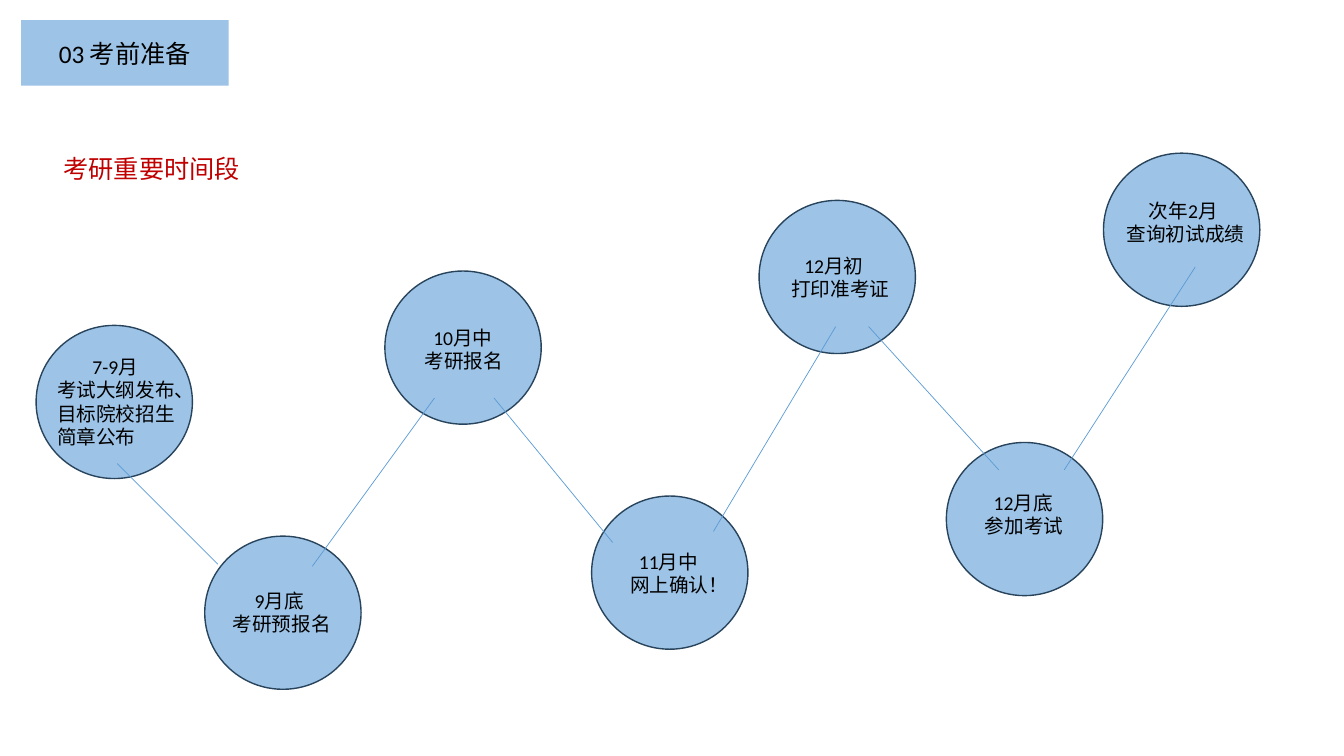
from dataclasses import dataclass

from pptx import Presentation
from pptx.dml.color import RGBColor
from pptx.enum.shapes import MSO_CONNECTOR, MSO_SHAPE
from pptx.enum.text import MSO_ANCHOR, MSO_AUTO_SIZE, PP_ALIGN
from pptx.oxml.ns import qn
from pptx.util import Cm, Pt
from lxml.etree import SubElement


@dataclass(frozen=True)
class Theme:
    font: str = "Calibri"
    fill: RGBColor = RGBColor(0x9D, 0xC3, 0xE6)
    outline: RGBColor = RGBColor(0x28, 0x44, 0x5D)
    link: RGBColor = RGBColor(0x5B, 0x9B, 0xD5)
    text: RGBColor = RGBColor(0, 0, 0)
    accent: RGBColor = RGBColor(0xC0, 0, 0)
    heading_size: Pt = Pt(18)
    body_size: Pt = Pt(14)
    outline_width: Pt = Pt(1)
    link_width: Pt = Pt(0.5)


THEME = Theme()
CIRCLE_WIDTH, CIRCLE_HEIGHT = 3.94, 3.86
DATE_INDENT = 0.89

# circle left and top, label left and top, date, event, event indent (cm)
MILESTONES = [
    (0.91, 8.2, 1.19, 8.81, "7-9月", "考试大纲发布、目标院校招生简章公布", 0),
    (5.16, 13.51, 5.28, 14.71, "9月底", "考研预报名", 0.33),
    (9.7, 6.83, 9.78, 8.08, "10月中", "考研报名", 0.67),
    (14.91, 12.5, 14.96, 13.72, "11月中", "网上确认！", 0.67),
    (19.13, 5.05, 19.13, 6.27, "12月初", "打印准考证", 0.56),
    (23.85, 11.15, 23.9, 12.24, "12月底", "参加考试", 0.67),
    (27.81, 3.86, 27.81, 4.88, "次年2月", "查询初试成绩", 0.33),
]

# start x, start y, end x, end y (cm)
LINKS = [
    (2.95, 11.68, 5.49, 14.22),
    (7.87, 14.27, 10.95, 10.03),
    (12.45, 10.03, 15.44, 13.67),
    (17.98, 13.39, 21.06, 8.23),
    (21.89, 8.23, 25.17, 11.84),
    (30.12, 6.73, 26.82, 11.84),
]


def add_run(paragraph, text, size, color=THEME.text):
    run = paragraph.add_run()
    run.text = text
    run.font.name = THEME.font
    run.font.size = size
    run.font.color.rgb = color


def indent(paragraph, distance):
    properties = paragraph._p.get_or_add_pPr()
    properties.set("marL", str(Cm(distance)))
    properties.set("indent", "0")


def format_title(slide):
    title = slide.shapes.title
    title.left, title.top, title.width, title.height = Cm(0.53), Cm(0.51), Cm(5.23), Cm(1.65)
    title.fill.solid()
    title.fill.fore_color.rgb = THEME.fill
    frame = title.text_frame
    frame.auto_size = MSO_AUTO_SIZE.NONE
    frame.vertical_anchor = MSO_ANCHOR.MIDDLE
    paragraph = frame.paragraphs[0]
    paragraph.alignment = PP_ALIGN.CENTER
    add_run(paragraph, "03 考前准备", THEME.heading_size)


def add_subtitle(slide):
    box = slide.shapes.add_textbox(Cm(1.35), Cm(3.73), Cm(5), Cm(1.02))
    box.text_frame.word_wrap = False
    add_run(box.text_frame.paragraphs[0], "考研重要时间段", THEME.heading_size, THEME.accent)


def add_circle(slide, left, top):
    circle = slide.shapes.add_shape(
        MSO_SHAPE.FLOWCHART_CONNECTOR,
        Cm(left), Cm(top), Cm(CIRCLE_WIDTH), Cm(CIRCLE_HEIGHT),
    )
    circle.shadow.inherit = False
    circle.fill.solid()
    circle.fill.fore_color.rgb = THEME.fill
    circle.line.color.rgb = THEME.outline
    circle.line.width = THEME.outline_width


def add_label(slide, left, top, date, event, event_indent):
    box = slide.shapes.add_textbox(Cm(left), Cm(top), Cm(CIRCLE_WIDTH), Cm(1.45))
    frame = box.text_frame
    frame.word_wrap = True
    frame.auto_size = MSO_AUTO_SIZE.SHAPE_TO_FIT_TEXT
    lines = [(frame.paragraphs[0], date, DATE_INDENT),
             (frame.add_paragraph(), event, event_indent)]
    for paragraph, text, distance in lines:
        indent(paragraph, distance)
        add_run(paragraph, text, THEME.body_size)


def add_link(slide, *ends):
    link = slide.shapes.add_connector(MSO_CONNECTOR.STRAIGHT, *map(Cm, ends))
    link.line.color.rgb = THEME.link
    link.line.width = THEME.link_width
    SubElement(link._element.spPr, qn("a:effectLst"))


def main():
    presentation = Presentation()
    presentation.slide_width, presentation.slide_height = Cm(33.87), Cm(19.05)
    title_only = presentation.slide_layouts[5]
    slide = presentation.slides.add_slide(title_only)
    format_title(slide)
    add_subtitle(slide)
    for circle_left, circle_top, *label in MILESTONES:
        add_circle(slide, circle_left, circle_top)
        add_label(slide, *label)
    for ends in LINKS:
        add_link(slide, *ends)
    presentation.save("out.pptx")


if __name__ == "__main__":
    main()
